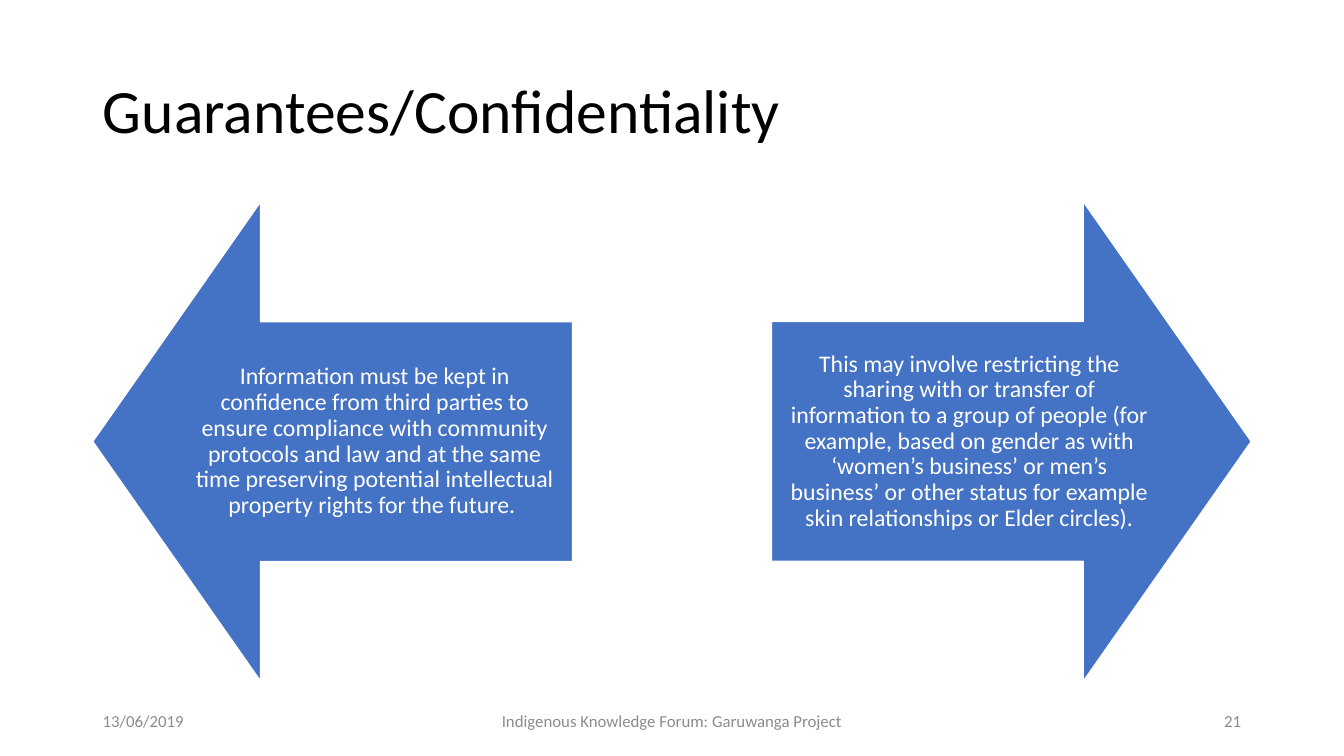
"""Build the Guarantees/Confidentiality slide with two opposing arrows."""
import pptx
import pptx.util
import pptx.dml.color
import pptx.enum.shapes
import pptx.enum.text

Inches = pptx.util.Inches
Align = pptx.enum.text.PP_ALIGN

TITLE = "Guarantees/Confidentiality"
ARROWS = [
    ("left", "Information must be kept in confidence from third parties to ensure "
             "compliance with community protocols and law and at the same time "
             "preserving potential intellectual property rights for the future. "),
    ("right", "This may involve restricting the sharing with or transfer of "
              "information to a group of people (for example, based on gender as with "
              "‘women’s business’ or men’s business’ or other status for example "
              "skin relationships or Elder circles)."),
]
FOOTER = [
    ("13/06/2019", 3, Align.LEFT),
    ("Indigenous Knowledge Forum: Garuwanga Project", 4.5, Align.CENTER),
    ("21", 3, Align.RIGHT),
]
COLORS = {"title": "000000", "arrow": "4472C4", "light": "FFFFFF", "footer": "8C8C8C"}
STYLES = {
    "title": {"size": 44, "color": "title", "spacing": 0.9, "inset": (0.1, 0.05)},
    "arrow": {"size": 17, "color": "light", "spacing": 0.9, "inset": (0.13, 0.13)},
    "footer": {"size": 12, "color": "footer", "spacing": 1.0, "inset": (0.1, 0.05)},
}

WIDTH, HEIGHT = 13.33, 7.5
MARGIN = 0.92
CONTENT = WIDTH - 2 * MARGIN
ARROW_TOP, ARROW_SIZE = 2, 4.76
SHAFT, HEAD = 0.5, 0.35
FOOTER_TOP, FOOTER_HEIGHT = 6.95, 0.4


def color(name):
    return pptx.dml.color.RGBColor.from_string(COLORS[name])


def write(box, text, style, align):
    look = STYLES[style]
    across, down = (Inches(side) for side in look["inset"])
    frame = box.text_frame
    frame_format = {
        "word_wrap": True,
        "auto_size": pptx.enum.text.MSO_AUTO_SIZE.NONE,
        "vertical_anchor": pptx.enum.text.MSO_ANCHOR.MIDDLE,
        "margin_left": across, "margin_right": across,
        "margin_top": down, "margin_bottom": down,
    }
    for name, value in frame_format.items():
        setattr(frame, name, value)
    para = frame.paragraphs[0]
    para.alignment = align
    para.line_spacing = look["spacing"]
    span = para.add_run()
    span.text = text
    span.font.name = "Calibri"
    span.font.size = pptx.util.Pt(look["size"])
    span.font.color.rgb = color(look["color"])


def add_text(page, place, text, style, align):
    box = page.shapes.add_textbox(*map(Inches, place))
    write(box, text, style, align)


def add_arrow(page, side, text):
    points_left = side == "left"
    left = MARGIN if points_left else WIDTH - MARGIN - ARROW_SIZE
    arrow = page.shapes.add_shape(
        pptx.enum.shapes.MSO_SHAPE.UP_ARROW,
        *map(Inches, (left, ARROW_TOP, ARROW_SIZE, ARROW_SIZE)))
    arrow.rotation = 270 if points_left else 90
    arrow.adjustments[0], arrow.adjustments[1] = SHAFT, HEAD
    arrow.shadow.inherit = False
    arrow.fill.solid()
    arrow.fill.fore_color.rgb = color("arrow")
    arrow.line.color.rgb = color("light")
    arrow.line.width = pptx.util.Pt(1)

    inside_head = ARROW_SIZE * HEAD * SHAFT
    height = ARROW_SIZE * SHAFT
    place = (left + inside_head * points_left, ARROW_TOP + (ARROW_SIZE - height) / 2,
             ARROW_SIZE - inside_head, height)
    add_text(page, place, text, "arrow", Align.CENTER)


def main():
    deck = pptx.Presentation()
    deck.slide_width, deck.slide_height = Inches(WIDTH), Inches(HEIGHT)
    page = deck.slides.add_slide(deck.slide_layouts.get_by_name("Title Only"))

    title = page.shapes.title
    title_place = {"left": MARGIN, "top": 0.4, "width": CONTENT, "height": 1.45}
    for name, value in title_place.items():
        setattr(title, name, Inches(value))
    write(title, TITLE, "title", Align.LEFT)

    for side, text in ARROWS:
        add_arrow(page, side, text)

    gap = (CONTENT - sum(width for _, width, _ in FOOTER)) / (len(FOOTER) - 1)
    left = MARGIN
    for text, width, align in FOOTER:
        add_text(page, (left, FOOTER_TOP, width, FOOTER_HEIGHT), text, "footer", align)
        left += width + gap

    deck.save("out.pptx")


if __name__ == "__main__":
    main()
